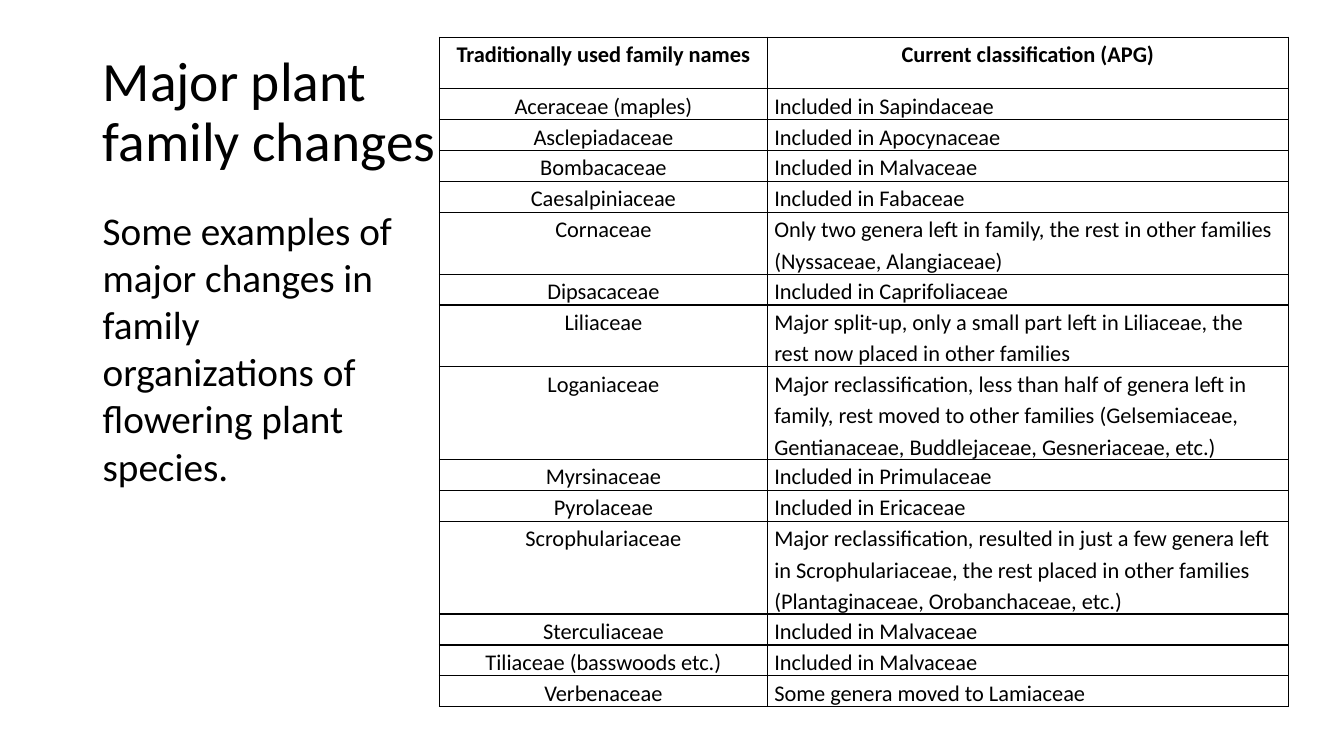
import math
from lxml import etree
from pptx import Presentation
from pptx.dml.color import RGBColor
from pptx.enum import text
from pptx.oxml import ns
from pptx.util import Inches, Pt

FONT, BLACK, WHITE = "Calibri", "000000", "FFFFFF"
TITLE = "Major plant family changes"
SUMMARY = "Some examples of major changes in family organizations of flowering plant species."
HEADINGS = ("Traditionally used family names", "Current classification (APG)")
FAMILIES = [
    ("Aceraceae (maples)", "Included in Sapindaceae"),
    ("Asclepiadaceae", "Included in Apocynaceae"),
    ("Bombacaceae", "Included in Malvaceae"),
    ("Caesalpiniaceae", "Included in Fabaceae"),
    ("Cornaceae", "Only two genera left in family, the rest in other families "
                  "(Nyssaceae, Alangiaceae)"),
    ("Dipsacaceae", "Included in Caprifoliaceae"),
    ("Liliaceae", "Major split-up, only a small part left in Liliaceae, "
                  "the rest now placed in other families"),
    ("Loganiaceae", "Major reclassification, less than half of genera left in family, "
                    "rest moved to other families (Gelsemiaceae, Gentianaceae, "
                    "Buddlejaceae, Gesneriaceae, etc.)"),
    ("Myrsinaceae", "Included in Primulaceae"),
    ("Pyrolaceae", "Included in Ericaceae"),
    ("Scrophulariaceae", "Major reclassification, resulted in just a few genera left in "
                         "Scrophulariaceae, the rest placed in other families "
                         "(Plantaginaceae, Orobanchaceae, etc.)"),
    ("Sterculiaceae", "Included in Malvaceae"),
    ("Tiliaceae (basswoods etc.)", "Included in Malvaceae"),
    ("Verbenaceae", "Some genera moved to Lamiaceae"),
]
COLUMN_WIDTHS = (3.25, 5.17)
HEADING_HEIGHT, LINE_HEIGHT, LINE_CHARS = 0.51, 0.27, 56


def color(hex_code):
    return RGBColor.from_string(hex_code)


def write(frame, words, size, spacing, align=text.PP_ALIGN.LEFT, bold=False):
    paragraph = frame.paragraphs[0]
    paragraph.alignment = align
    paragraph.line_spacing = spacing
    run = paragraph.add_run()
    run.text = words
    run.font.name, run.font.size, run.font.bold = FONT, Pt(size), bold
    run.font.color.rgb = color(BLACK)


def add_words(slide, box, words, size, spacing, anchor):
    frame = slide.shapes.add_textbox(*map(Inches, box)).text_frame
    frame.word_wrap = True
    frame.vertical_anchor = anchor
    write(frame, words, size, spacing)


def style_cell(cell):
    cell.margin_left = cell.margin_right = Inches(0.07)
    cell.margin_top = cell.margin_bottom = 0
    properties = cell._tc.get_or_add_tcPr()
    for side in ("lnL", "lnR", "lnT", "lnB"):
        border = etree.SubElement(properties, ns.qn(f"a:{side}"), w=str(Pt(1)))
        fill = etree.SubElement(border, ns.qn("a:solidFill"))
        etree.SubElement(fill, ns.qn("a:srgbClr"), val=BLACK)
    cell.fill.background()


def add_families(slide):
    rows = [HEADINGS, *FAMILIES]
    line_counts = [math.ceil(len(current) / LINE_CHARS) for _, current in FAMILIES]
    heights = [HEADING_HEIGHT] + [
        LINE_HEIGHT * lines if lines > 1 else 0.26 for lines in line_counts]
    table = slide.shapes.add_table(
        len(rows), len(COLUMN_WIDTHS), Inches(4.36), Inches(0.37),
        Inches(sum(COLUMN_WIDTHS)), Inches(sum(heights))).table
    table.first_row = table.horz_banding = False
    for column, width in zip(table.columns, COLUMN_WIDTHS):
        column.width = Inches(width)
    for r, (names, height) in enumerate(zip(rows, heights)):
        table.rows[r].height = Inches(height)
        for c, name in enumerate(names):
            heading = r == 0
            centered = heading or c == 0
            cell = table.cell(r, c)
            style_cell(cell)
            write(cell.text_frame, name, 16, 1.15,
                  text.PP_ALIGN.CENTER if centered else text.PP_ALIGN.LEFT, heading)


def main():
    deck = Presentation()
    deck.slide_width, deck.slide_height = Inches(13.33), Inches(7.5)
    slide = deck.slides.add_slide(deck.slide_layouts[6])
    slide.background.fill.solid()
    slide.background.fill.fore_color.rgb = color(WHITE)
    add_words(slide, (0.92, 0.4, 3.59, 1.45), TITLE, 39.6, 0.9, text.MSO_ANCHOR.MIDDLE)
    add_words(slide, (0.92, 2, 3.1, 4.76), SUMMARY, 28, 1.0, text.MSO_ANCHOR.TOP)
    add_families(slide)
    deck.save("out.pptx")


if __name__ == "__main__":
    main()
